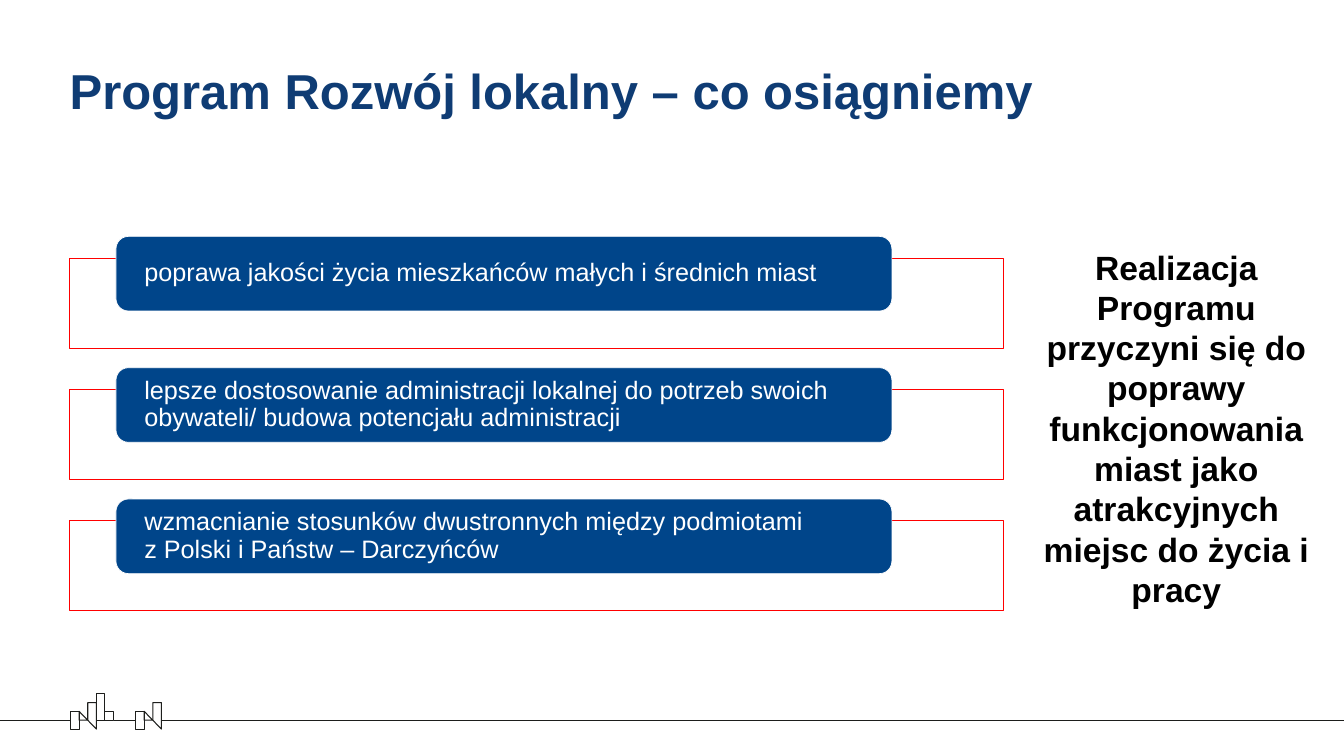
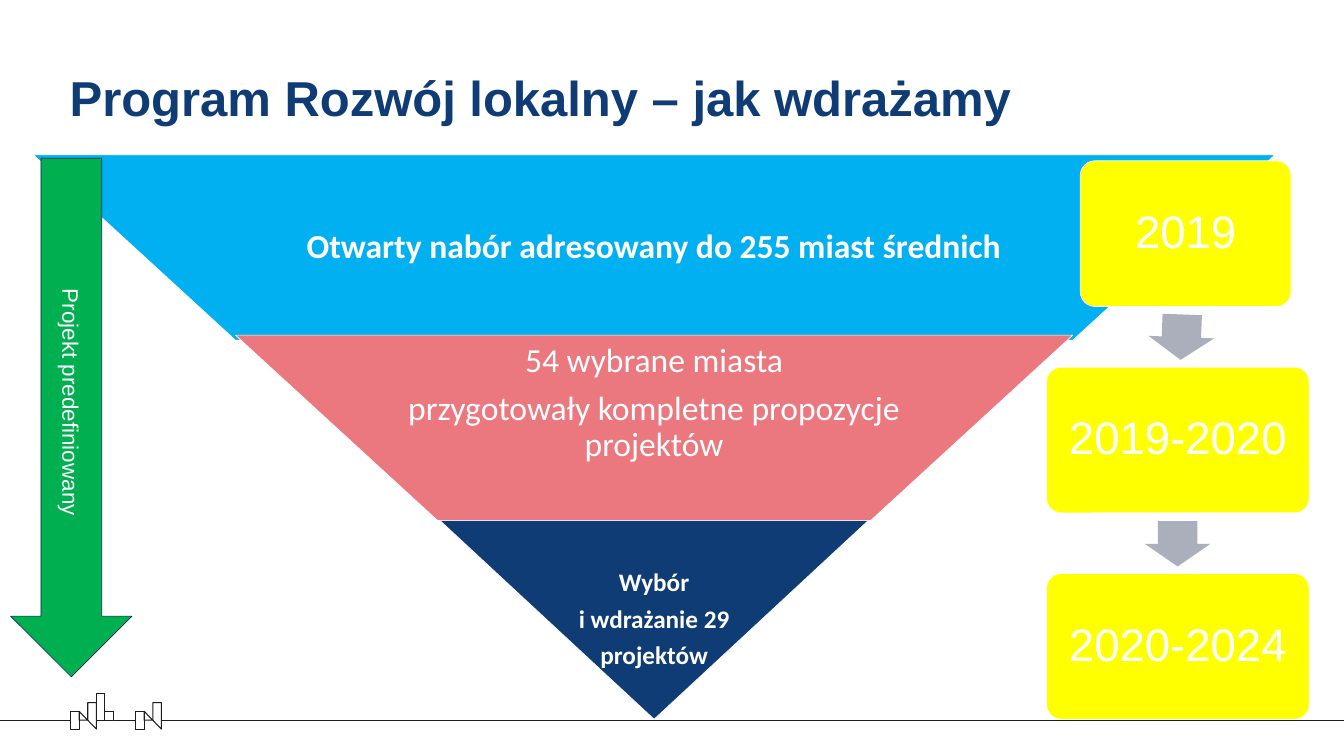
from lxml.etree import SubElement
from pptx import Presentation
from pptx.dml.color import RGBColor
from pptx.enum.shapes import MSO_CONNECTOR as CONN, MSO_SHAPE as SHAPE
from pptx.enum.text import MSO_ANCHOR as ANCHOR, MSO_AUTO_SIZE as AUTO, PP_ALIGN as ALIGN
from pptx.oxml.ns import qn
from pptx.util import Inches, Pt

WIDTH, HEIGHT = Inches(26.66), Inches(15)
NAVY, BLUE, INK, WHITE = "0F3C74", "00458A", "1D1E1C", "FFFFFF"
RED, YELLOW, GREY, BLACK = "FF0000", "FFFF00", "ABAFBC", "000000"
MARGIN = 5.18             # left edge of the content, % of slide width
UNIT_X, UNIT_Y = 0.64, 1.17  # one cell of the skyline, % of slide size
HORIZON = 95.27           # ground line, % of slide height


# Helpers: every position and size is a percentage of the slide
def px(share):
    return int(WIDTH * share / 100)


def py(share):
    return int(HEIGHT * share / 100)


def box(x, y, w, h):
    return px(x), py(y), px(w), py(h)


def rgb(value):
    return RGBColor.from_string(value)


def style(sp, fill=None, line=None, width=1.0):
    sp.shadow.inherit = False
    if fill:
        sp.fill.solid()
        sp.fill.fore_color.rgb = rgb(fill)
    else:
        sp.fill.background()
    if line:
        sp.line.color.rgb = rgb(line)
        sp.line.width = Pt(width)
    else:
        sp.line.fill.background()
    return sp


def add_shape(s, kind, area, fill=None, line=None, width=1.0, adj=(), rotation=0):
    sp = s.shapes.add_shape(kind, *box(*area))
    for i, value in enumerate(adj):
        sp.adjustments[i] = value
    sp.rotation = rotation
    return style(sp, fill, line, width)


def add_outline(s, points):
    start, *rest = [(px(x), py(y)) for x, y in points]
    builder = s.shapes.build_freeform(*start)
    builder.add_line_segments(rest, close=True)
    return style(builder.convert_to_shape(), line=INK, width=1.5)


def add_line(s, x1, x2, y):
    line = s.shapes.add_connector(CONN.STRAIGHT, px(x1), py(y), px(x2), py(y))
    line.line.color.rgb = rgb(INK)
    line.line.width = Pt(1.5)
    SubElement(line._element.spPr, qn("a:effectLst"))


def write(sp, lines, size, color=WHITE, font="Arial", bold=False,
          align=ALIGN.CENTER, anchor=ANCHOR.MIDDLE, insets=(0.1, 0.05, 0.1, 0.05),
          tight=False):
    """Fill a shape with paragraphs; tight gives 90% lines and a gap after each."""
    tf = sp.text_frame
    tf.word_wrap = True
    tf.auto_size = AUTO.NONE
    tf.vertical_anchor = anchor
    tf.margin_left, tf.margin_top, tf.margin_right, tf.margin_bottom = map(Inches, insets)
    for i, line in enumerate(lines):
        p = tf.add_paragraph() if i else tf.paragraphs[0]
        p.alignment = align
        if tight:
            p.line_spacing = 0.9
            p.space_after = Pt(round(size * 0.35))
        for j, part in enumerate(line.split("\n")):
            if j:
                p.add_line_break()
            r = p.add_run()
            r.text = part
            r.font.name, r.font.size, r.font.bold = font, Pt(size), bold
            r.font.color.rgb = rgb(color)


def add_text(s, area, lines, size, **options):
    write(s.shapes.add_textbox(*box(*area)), lines, size, **options)


# Shared parts of the slides
def add_building(s, x, bottom, rows):
    height = rows * UNIT_Y
    add_shape(s, SHAPE.RECTANGLE, (x, bottom - height, UNIT_X, height), line=INK, width=1.5)


def add_skyline(s):
    first, second = 5.25, 10.09
    low = HORIZON + UNIT_Y
    add_building(s, first + 4 * UNIT_X, HORIZON, 1)
    add_building(s, first + 3 * UNIT_X, HORIZON, 3)
    for left in (first, second):
        roof, wall, right = (left + n * UNIT_X for n in (1, 2, 3))
        add_building(s, left, low, 2)
        add_outline(s, [(wall, HORIZON), (roof, HORIZON), (roof, HORIZON - UNIT_Y)])
        add_outline(s, [(wall, low - 3 * UNIT_Y), (wall, HORIZON), (right, low),
                        (right, low - 3 * UNIT_Y)])
    for x1, x2 in ((0, first), (first + 5 * UNIT_X, second), (second + 3 * UNIT_X, 100)):
        add_line(s, x1, x2, HORIZON)


def new_slide(prs, title, title_top):
    s = prs.slides.add_slide(prs.slide_layouts[5])
    add_skyline(s)
    sp = s.shapes.title
    sp.left, sp.top, sp.width, sp.height = box(MARGIN, title_top, 89.68, 7.87)
    write(sp, [title], 70, NAVY, bold=True, align=ALIGN.LEFT, insets=(0, 0, 0, 0))
    return s


# Slide 1: framed goals
def add_goal(s, index, text):
    top = 31.27 + index * 17.37
    add_shape(s, SHAPE.RECTANGLE, (MARGIN, top + 2.86, 69.5, 11.93), line=RED, width=1.1)
    label = add_shape(s, SHAPE.ROUNDED_RECTANGLE, (8.63, top, 57.73, 9.87), BLUE, WHITE)
    write(label, [text], 36, align=ALIGN.LEFT, insets=(0.49, 0, 0.49, 0), tight=True)


def goals_slide(prs):
    s = new_slide(prs, "Program Rozwój lokalny – co osiągniemy", 8)
    goals = [
        "poprawa jakości życia mieszkańców małych i średnich miast",
        "lepsze dostosowanie administracji lokalnej do potrzeb swoich "
        "obywateli/ budowa potencjału administracji",
        "wzmacnianie stosunków dwustronnych między podmiotami\nz Polski i Państw – Darczyńców",
    ]
    for i, goal in enumerate(goals):
        add_goal(s, i, goal)
    add_text(s, (77.08, 32.27, 20.89, 49.13),
             ["Realizacja Programu przyczyni się do poprawy funkcjonowania miast "
              "jako atrakcyjnych miejsc do życia i pracy"],
             48, color=BLACK, bold=True, anchor=ANCHOR.TOP)


# Slide 2: funnel, timeline and side arrow
def add_funnel_level(s, top, width, height, text_width, fill, lines, size, bold, bottom=0.07):
    centre = 48.67
    add_shape(s, SHAPE.TRAPEZOID, (centre - width / 2, top, width, height),
              fill, WHITE, adj=[1.09], rotation=180)
    add_text(s, (centre - text_width / 2, top, text_width, height), lines, size,
             font="Calibri", bold=bold, insets=(0.07, 0.07, 0.07, bottom), tight=True)


def add_year(s, index, text, centre, width):
    sp = add_shape(s, SHAPE.ROUNDED_RECTANGLE,
                   (centre - width / 2, 21.27 + index * 27.3, width, 19.27),
                   YELLOW, WHITE, adj=[0.1])
    write(sp, [text], 65, insets=(0.27,) * 4, tight=True)


def add_step_arrow(s, centre, middle, rotation):
    w, h = 3.38, 8.67
    add_shape(s, SHAPE.RIGHT_ARROW, (centre - w / 2, middle - h / 2, w, h), GREY,
              adj=[0.6, 0.5], rotation=rotation)


def process_slide(prs):
    s = new_slide(prs, "Program Rozwój lokalny – jak wdrażamy", 8.93)
    add_funnel_level(s, 20.47, 92.39, 24.53, 60.05, "00B0F0",
                     ["Otwarty nabór adresowany do 255 miast średnich"], 48, True)
    add_funnel_level(s, 44.33, 62.3, 24.53, 40.5, "EA787E",
                     ["54 wybrane miasta", "przygotowały kompletne propozycje projektów"],
                     48, False, bottom=1.03)
    add_funnel_level(s, 68.87, 31.85, 26.27, 31.85, NAVY,
                     ["Wybór", "i wdrażanie 29", "projektów"], 36, True)

    years = [("2019", 88.22, 15.68), ("2019-2020", 87.64, 19.54), ("2020-2024", 87.64, 19.54)]
    for i, (text, centre, width) in enumerate(years):
        add_year(s, i, text, centre, width)
    add_step_arrow(s, 87.9, 44.6, 92.2)
    add_step_arrow(s, 87.62, 71.93, 90)

    arrow = add_shape(s, SHAPE.DOWN_ARROW, (0.79, 20.93, 9.04, 68.6), "00B050", "0B2C56")
    write(arrow, ["Projekt predefiniowany"], 32)
    arrow.text_frame._txBody.bodyPr.set("vert", "vert")


def main():
    prs = Presentation()
    prs.slide_width, prs.slide_height = WIDTH, HEIGHT
    goals_slide(prs)
    process_slide(prs)
    prs.save("out.pptx")


if __name__ == "__main__":
    main()
